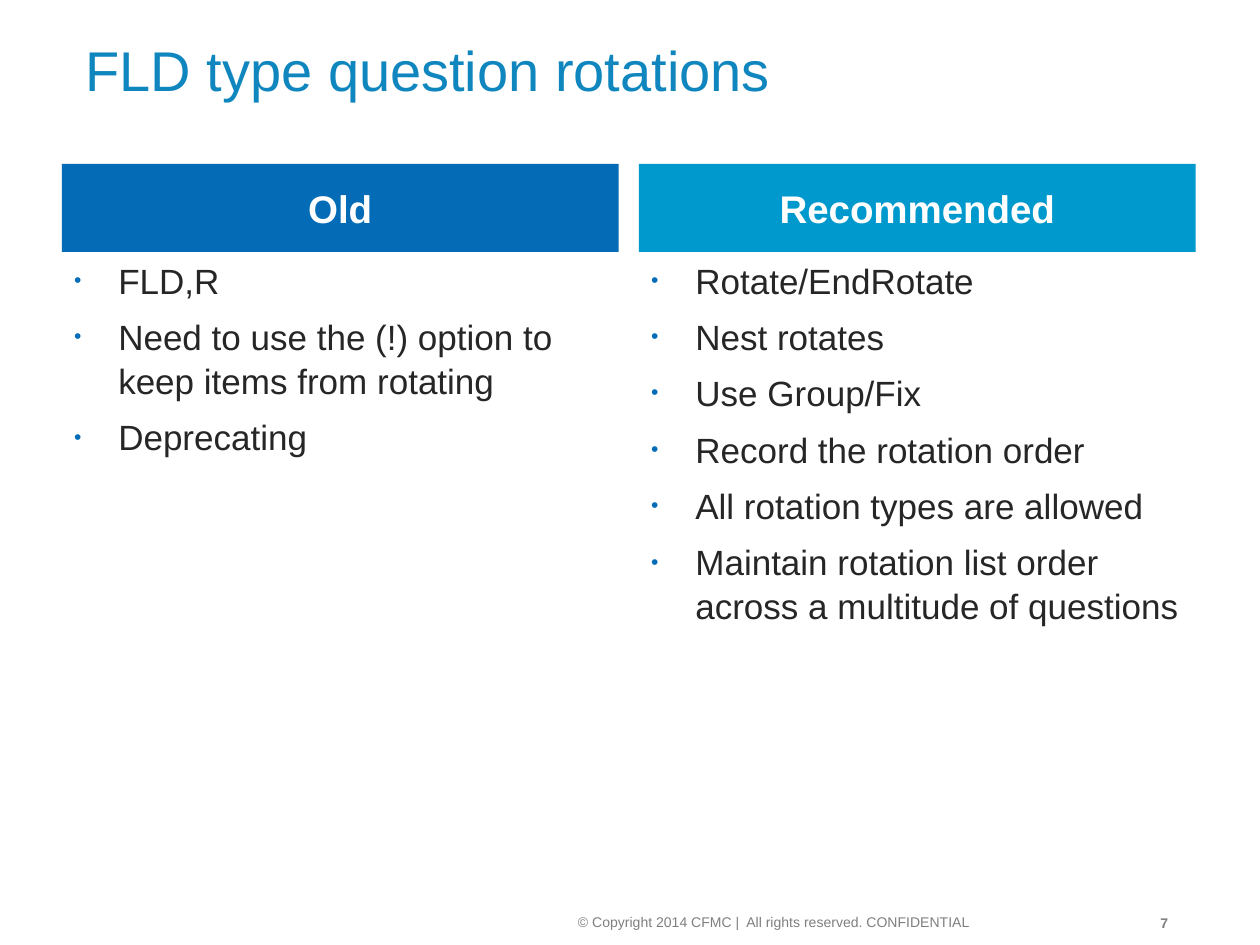
from dataclasses import dataclass
from lxml import etree
from pptx import Presentation
from pptx.dml.color import RGBColor
from pptx.enum.shapes import MSO_SHAPE
from pptx.enum.text import MSO_ANCHOR as Anchor, PP_ALIGN as Align
from pptx.oxml.ns import qn
from pptx.util import Inches, Pt


@dataclass(frozen=True)
class Theme:
    font: str = "Arial"
    title: str = "1086BE"
    bullet: str = "046CB6"
    body: str = "262626"
    footer: str = "7F7F7F"
    white: str = "FFFFFF"
    title_size: int = 32
    header_size: int = 22
    body_size: int = 20
    footer_size: int = 8


THEME = Theme()
TITLE = "FLD type question rotations"
COLUMNS = [
    ("Old", "046CB6", [
        "FLD,R",
        "Need to use the (!) option to keep items from rotating",
        "Deprecating",
    ]),
    ("Recommended", "0099CD", [
        "Rotate/EndRotate",
        "Nest rotates",
        "Use Group/Fix",
        "Record the rotation order",
        "All rotation types are allowed",
        "Maintain rotation list order across a multitude of questions",
    ]),
]
COPYRIGHT = "© Copyright 2014 CFMC |  All rights reserved. CONFIDENTIAL"
PAGE_NUMBER = "7"

LEFT, COLUMN_WIDTH, GAP = 0.49, 4.42, 0.16
HEADER_TOP, HEADER_HEIGHT = 1.3, 0.7
LIST_TOP, LIST_HEIGHT = 1.99, 4.32


def write(shape, lines, size, color, bold=False, align=Align.LEFT, anchor=Anchor.MIDDLE):
    tf = shape.text_frame
    tf.word_wrap = True
    tf.vertical_anchor = anchor
    tf.text = "\n".join(lines)
    for p in tf.paragraphs:
        p.alignment = align
        for r in p.runs:
            r.font.name = THEME.font
            r.font.size = Pt(size)
            r.font.bold = bold
            r.font.color.rgb = RGBColor.from_string(color)
    return tf


def add_text(slide, box, lines, *style, **options):
    s = slide.shapes.add_textbox(*map(Inches, box))
    return write(s, lines, *style, **options)


def add_header(slide, box, label, fill):
    s = slide.shapes.add_shape(MSO_SHAPE.RECTANGLE, *map(Inches, box))
    s.shadow.inherit = False
    s.fill.solid()
    s.fill.fore_color.rgb = RGBColor.from_string(fill)
    s.line.fill.background()
    write(s, [label], THEME.header_size, THEME.white, bold=True, align=Align.CENTER)


def add_bullets(slide, box, items):
    tf = add_text(slide, box, items, THEME.body_size, THEME.body, anchor=Anchor.TOP)
    for i, p in enumerate(tf.paragraphs):
        p.line_spacing = 1.05
        if i:
            p.space_before = Pt(7)
        props = p._p.get_or_add_pPr()
        props.set("marL", str(Inches(0.35)))
        props.set("indent", str(-Inches(0.35)))
        color = etree.SubElement(props, qn("a:buClr"))
        etree.SubElement(color, qn("a:srgbClr"), val=THEME.bullet)
        etree.SubElement(props, qn("a:buSzPct"), val="60000")
        etree.SubElement(props, qn("a:buFont"), typeface=THEME.font)
        etree.SubElement(props, qn("a:buChar"), char="•")


def main():
    prs = Presentation()
    prs.slide_width, prs.slide_height = Inches(10), Inches(7.5)
    slide = prs.slides.add_slide(prs.slide_layouts[6])

    add_text(slide, (0.58, 0.13, 8.92, 0.83), [TITLE], THEME.title_size, THEME.title)
    for i, (label, fill, items) in enumerate(COLUMNS):
        x = LEFT + i * (COLUMN_WIDTH + GAP)
        add_header(slide, (x, HEADER_TOP, COLUMN_WIDTH, HEADER_HEIGHT), label, fill)
        add_bullets(slide, (x, LIST_TOP, COLUMN_WIDTH, LIST_HEIGHT), items)
    add_text(slide, (1.87, 7.19, 5.93, 0.26), [COPYRIGHT],
             THEME.footer_size, THEME.footer, align=Align.RIGHT)
    add_text(slide, (8.95, 7.19, 0.58, 0.27), [PAGE_NUMBER],
             THEME.footer_size, THEME.footer, bold=True, align=Align.CENTER)

    prs.save("out.pptx")


if __name__ == "__main__":
    main()
